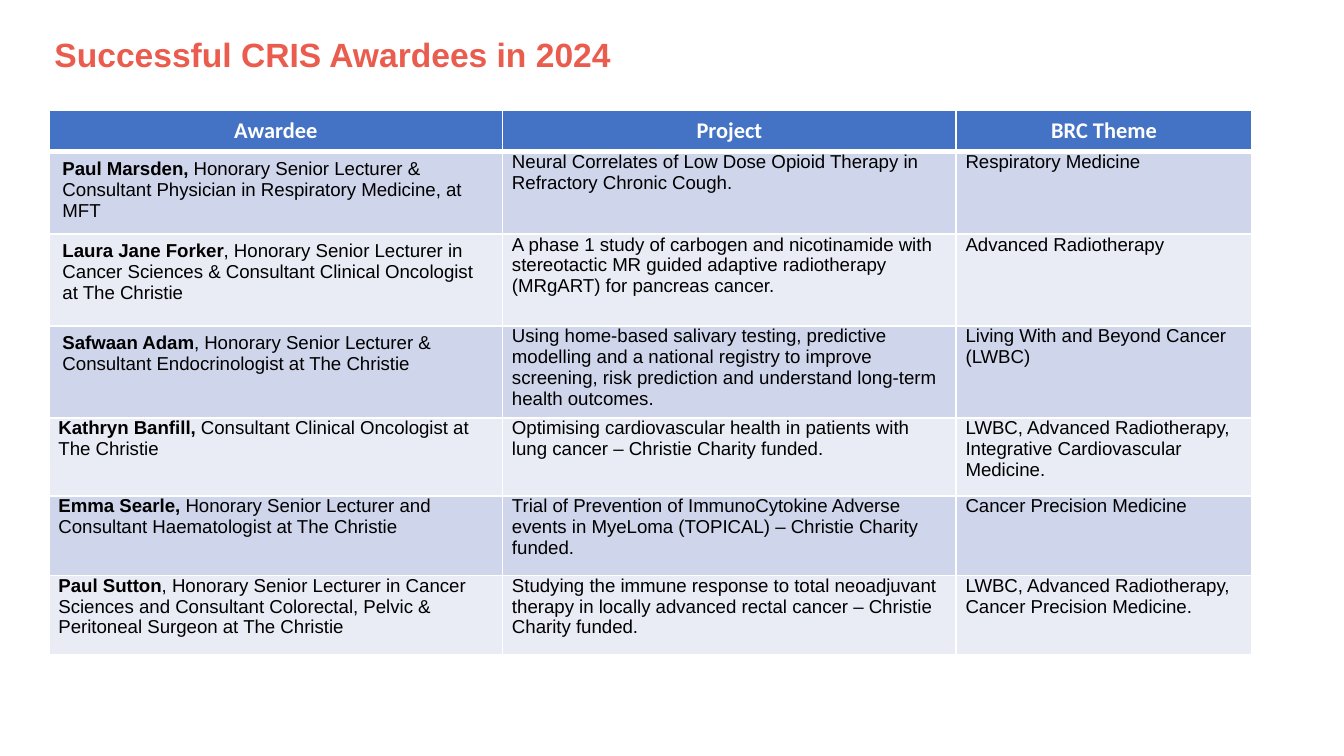
from dataclasses import dataclass
from typing import Any

from lxml import etree
from pptx import Presentation
from pptx.dml.color import RGBColor
from pptx.enum.text import MSO_ANCHOR, MSO_AUTO_SIZE, PP_ALIGN
from pptx.oxml.ns import qn
from pptx.util import Emu, Inches, Pt

LEFT, CENTER = PP_ALIGN.LEFT, PP_ALIGN.CENTER
MIDDLE = MSO_ANCHOR.MIDDLE
NO_FIT = MSO_AUTO_SIZE.NONE
WIDTH = Inches(10)
HEIGHT = Emu(WIDTH * 9 // 16)
WHITE, BLACK, CORAL, BLUE = "FFFFFF", "000000", "EA5D4E", "4472C4"
BANDS = ("CFD5EA", "E9EBF5")
HEADERS = ("Awardee", "Project", "BRC Theme")
COLUMNS = (33.75, 33.75, 22)
HEADER_HEIGHT = 5.5
WIDE_INSET, TIGHT_INSET = (0.1, 0.05), (0.07, 0)


@dataclass
class Award:
    height: float
    name: str
    role: str
    project: str
    themes: tuple[str, ...]
    inset: tuple[float, float] = TIGHT_INSET


AWARDS = (
    Award(10.9, "Paul Marsden,",
          " Honorary Senior Lecturer & Consultant Physician in Respiratory Medicine, at MFT",
          "Neural Correlates of Low Dose Opioid Therapy in Refractory Chronic Cough.",
          ("Respiratory Medicine",), WIDE_INSET),
    Award(12.15, "Laura Jane Forker",
          ", Honorary Senior Lecturer in Cancer Sciences & Consultant Clinical Oncologist "
          "at The Christie",
          "A phase 1 study of carbogen and nicotinamide with stereotactic MR guided adaptive "
          "radiotherapy (MRgART) for pancreas cancer.",
          ("Advanced Radiotherapy",), WIDE_INSET),
    Award(12.15, "Safwaan Adam",
          ", Honorary Senior Lecturer & Consultant Endocrinologist at The Christie",
          "Using home-based salivary testing, predictive modelling and a national registry to "
          "improve screening, risk prediction and understand long-term health outcomes.",
          ("Living With and Beyond Cancer (LWBC)",), WIDE_INSET),
    Award(10.35, "Kathryn Banfill, ", "Consultant Clinical Oncologist at The Christie",
          "Optimising cardiovascular health in patients with lung cancer – Christie Charity funded.",
          ("LWBC, Advanced Radiotherapy,", "Integrative Cardiovascular Medicine.")),
    Award(10.5, "Emma Searle, ",
          "Honorary Senior Lecturer and Consultant Haematologist at The Christie",
          "Trial of Prevention of ImmunoCytokine Adverse events in MyeLoma (TOPICAL) – "
          "Christie Charity funded.",
          ("Cancer Precision Medicine",)),
    Award(10.5, "Paul Sutton",
          ", Honorary Senior Lecturer in Cancer Sciences and Consultant Colorectal, Pelvic & "
          "Peritoneal Surgeon at The Christie",
          "Studying the immune response to total neoadjuvant therapy in locally advanced rectal "
          "cancer – Christie Charity funded.",
          ("LWBC, Advanced Radiotherapy,", "Cancer Precision Medicine.")),
)


def across(percent: float) -> Emu:
    return Emu(round(WIDTH * percent / 100))


def down(percent: float) -> Emu:
    return Emu(round(HEIGHT * percent / 100))


def rgb(value: str) -> RGBColor:
    return RGBColor.from_string(value)


def add_text(p: Any, text: str, *, size: float = 10, font: str = "Arial",
             color: str = BLACK, bold: bool = False, align: Any = LEFT) -> None:
    p.alignment = align
    r = p.add_run()
    r.text = text
    r.font.size, r.font.name, r.font.bold = Pt(size), font, bold
    r.font.color.rgb = rgb(color)


def style_cell(cell: Any, fill: str, inset: tuple[float, float],
               top: float = 1, bottom: float = 1) -> None:
    cell.margin_left = cell.margin_right = Inches(inset[0])
    cell.margin_top = cell.margin_bottom = Inches(inset[1])
    tc_pr = cell._tc.get_or_add_tcPr()
    for side, width in (("L", 1), ("R", 1), ("T", top), ("B", bottom)):
        line = etree.SubElement(tc_pr, qn(f"a:ln{side}"), w=str(Pt(width)))
        paint = etree.SubElement(line, qn("a:solidFill"))
        etree.SubElement(paint, qn("a:srgbClr"), val=WHITE)
    cell.fill.solid()
    cell.fill.fore_color.rgb = rgb(fill)


def add_title(s: Any, text: str) -> None:
    sp = s.shapes.title
    sp.left, sp.top, sp.width, sp.height = across(3.05), down(1.2), across(86.2), down(12.65)
    tf = sp.text_frame
    tf.auto_size, tf.vertical_anchor = NO_FIT, MIDDLE
    p = tf.paragraphs[0]
    p.line_spacing = 0.9
    add_text(p, text, size=18, color=CORAL, bold=True)


def fill_award(table: Any, row: int, award: Award) -> None:
    person, project, theme = (table.cell(row, c) for c in range(len(COLUMNS)))
    for cell, inset in ((person, award.inset), (project, TIGHT_INSET), (theme, TIGHT_INSET)):
        style_cell(cell, BANDS[(row - 1) % 2], inset, top=3 if row == 1 else 1)
    p = person.text_frame.paragraphs[0]
    add_text(p, award.name, bold=True)
    add_text(p, award.role)
    add_text(project.text_frame.paragraphs[0], award.project)
    tf = theme.text_frame
    for i, text in enumerate(award.themes):
        add_text(tf.add_paragraph() if i else tf.paragraphs[0], text)


def add_awards(s: Any) -> None:
    heights = (HEADER_HEIGHT, *(award.height for award in AWARDS))
    table = s.shapes.add_table(len(heights), len(COLUMNS), across(3.65), down(14.6),
                               across(sum(COLUMNS)), down(sum(heights))).table
    for column, width in zip(table.columns, COLUMNS):
        column.width = across(width)
    for row, height in zip(table.rows, heights):
        row.height = down(height)
    for c, text in enumerate(HEADERS):
        cell = table.cell(0, c)
        style_cell(cell, BLUE, WIDE_INSET, bottom=3)
        add_text(cell.text_frame.paragraphs[0], text, size=12, font="Calibri",
                 color=WHITE, bold=True, align=CENTER)
    for row, award in enumerate(AWARDS, 1):
        fill_award(table, row, award)


def main() -> None:
    prs = Presentation()
    prs.slide_width, prs.slide_height = WIDTH, HEIGHT
    s = prs.slides.add_slide(prs.slide_layouts[5])
    add_title(s, "Successful CRIS Awardees in 2024")
    add_awards(s)
    prs.save("out.pptx")


if __name__ == "__main__":
    main()
